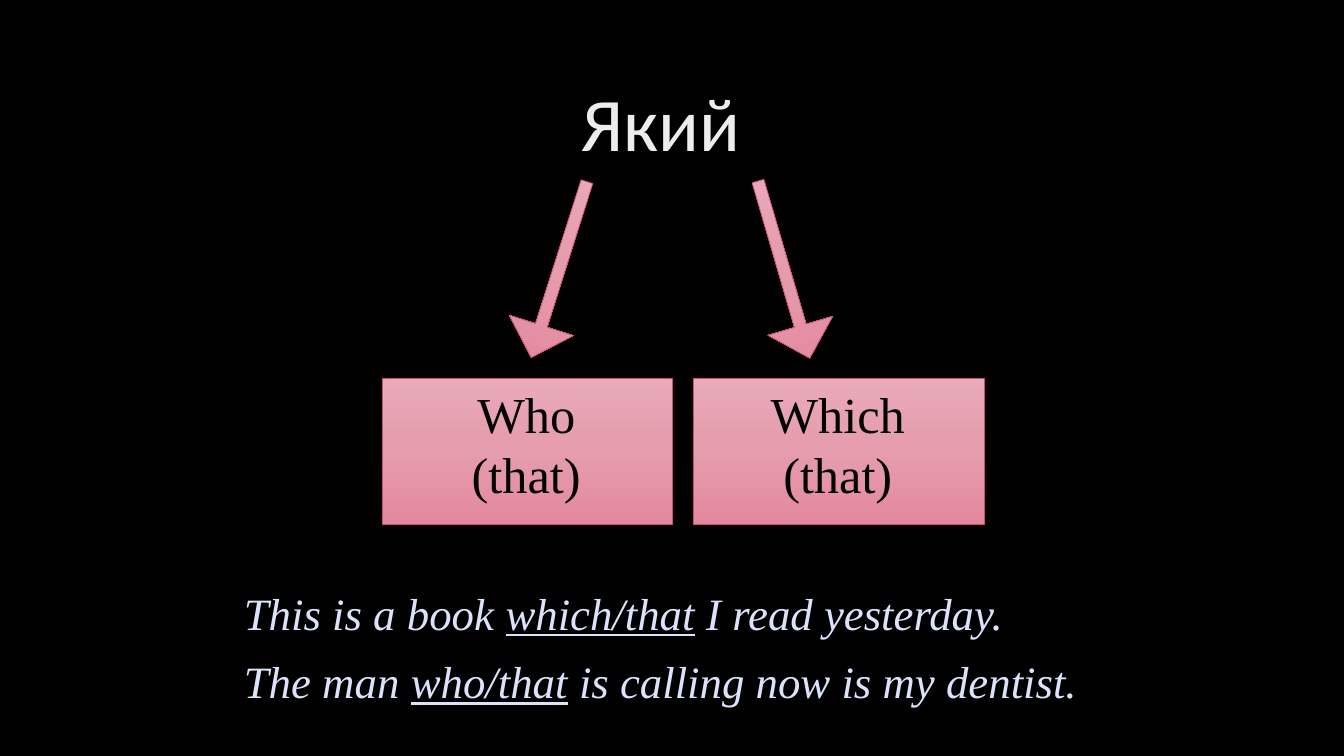
import copy

import pptx
import pptx.dml.color
import pptx.enum.shapes
import pptx.enum.text
import pptx.util
from pptx.dml.color import RGBColor
from pptx.util import Inches

BLACK = RGBColor(0x00, 0x00, 0x00)
TITLE_WHITE = RGBColor(0xED, 0xED, 0xED)
PALE_BLUE = RGBColor(0xDA, 0xE3, 0xFA)
OUTLINE_PINK = RGBColor(0xD5, 0x47, 0x73)
PINK_STOPS = [
    (0, RGBColor(0xE9, 0xAA, 0xB9)),
    (0.5, RGBColor(0xE5, 0x9C, 0xAC)),
    (1, RGBColor(0xE4, 0x89, 0x9F)),
]
SHAPES = pptx.enum.shapes.MSO_SHAPE
ALIGN = pptx.enum.text.PP_ALIGN
ANCHOR = pptx.enum.text.MSO_ANCHOR
AUTO_SIZE = pptx.enum.text.MSO_AUTO_SIZE


class SlideBuilder:
    serif = "Times New Roman"
    sans = "Calibri"

    def __init__(self, slide):
        self.slide = slide
        slide.background.fill.solid()
        slide.background.fill.fore_color.rgb = BLACK

    def pink_shape(self, kind, left, top, width, height):
        shape = self.slide.shapes.add_shape(
            kind, Inches(left), Inches(top), Inches(width), Inches(height)
        )
        shape.shadow.inherit = False
        shape.fill.gradient()
        shape.fill.gradient_angle = 270
        stop_list = shape._element.spPr.find(".//" + pptx.oxml.ns.qn("a:gsLst"))
        stop_list.insert(1, copy.deepcopy(stop_list[0]))
        for stop, (position, color) in zip(shape.fill.gradient_stops, PINK_STOPS):
            stop.position = position
            stop.color.rgb = color
        shape.line.color.rgb = OUTLINE_PINK
        shape.line.width = pptx.util.Pt(0.5)
        return shape

    def arrow(self, left, rotation):
        arrow = self.pink_shape(SHAPES.DOWN_ARROW, left, 1.76, 0.67, 1.83)
        arrow.adjustments[0] = 0.182
        arrow.adjustments[1] = 0.5
        arrow.rotation = rotation

    def text(self, left, top, width, height, paragraphs, font, size, color,
             align=ALIGN.LEFT, spacing=1.0, after=0, italic=False,
             anchor=ANCHOR.TOP, auto_size=AUTO_SIZE.SHAPE_TO_FIT_TEXT):
        box = self.slide.shapes.add_textbox(
            Inches(left), Inches(top), Inches(width), Inches(height)
        )
        frame = box.text_frame
        frame.word_wrap = True
        frame.auto_size = auto_size
        frame.vertical_anchor = anchor
        for index, parts in enumerate(paragraphs):
            paragraph = frame.add_paragraph() if index else frame.paragraphs[0]
            paragraph.alignment = align
            paragraph.line_spacing = spacing
            paragraph.space_after = pptx.util.Pt(after)
            for position, part in enumerate(parts):
                run = paragraph.add_run()
                run.text = part
                run.font.name = font
                run.font.size = pptx.util.Pt(size)
                run.font.color.rgb = color
                run.font.italic = italic
                run.font.underline = position == 1

    def title(self, words):
        self.text(5.67, 0.53, 2.71, 1.45, [[words]], self.sans, 54, TITLE_WHITE,
                  spacing=0.9, anchor=ANCHOR.MIDDLE, auto_size=AUTO_SIZE.NONE)

    def pronoun_box(self, left, pronoun):
        self.pink_shape(SHAPES.RECTANGLE, left, 3.75, 2.88, 1.45)
        self.text(left + 0.21, 3.75, 2.44, 1.31, [[pronoun], ["(that)"]],
                  self.serif, 36, BLACK, align=ALIGN.CENTER)

    def examples(self, sentences):
        self.text(2.32, 5.72, 9.86, 1.34, sentences, self.serif, 32, PALE_BLUE,
                  align=ALIGN.JUSTIFY, spacing=1.07, after=8, italic=True)


def main():
    presentation = pptx.Presentation()
    presentation.slide_width = Inches(13.33)
    presentation.slide_height = Inches(7.5)
    builder = SlideBuilder(
        presentation.slides.add_slide(presentation.slide_layouts[6])
    )
    builder.title("Який")
    builder.arrow(5.21, 17.6)
    builder.arrow(7.44, 343.7)
    builder.pronoun_box(3.79, "Who")
    builder.pronoun_box(6.88, "Which")
    builder.examples([
        ["This is a book ", "which/that", " I read yesterday."],
        ["The man ", "who/that", " is calling now is my dentist."],
    ])
    presentation.save("out.pptx")


if __name__ == "__main__":
    main()
